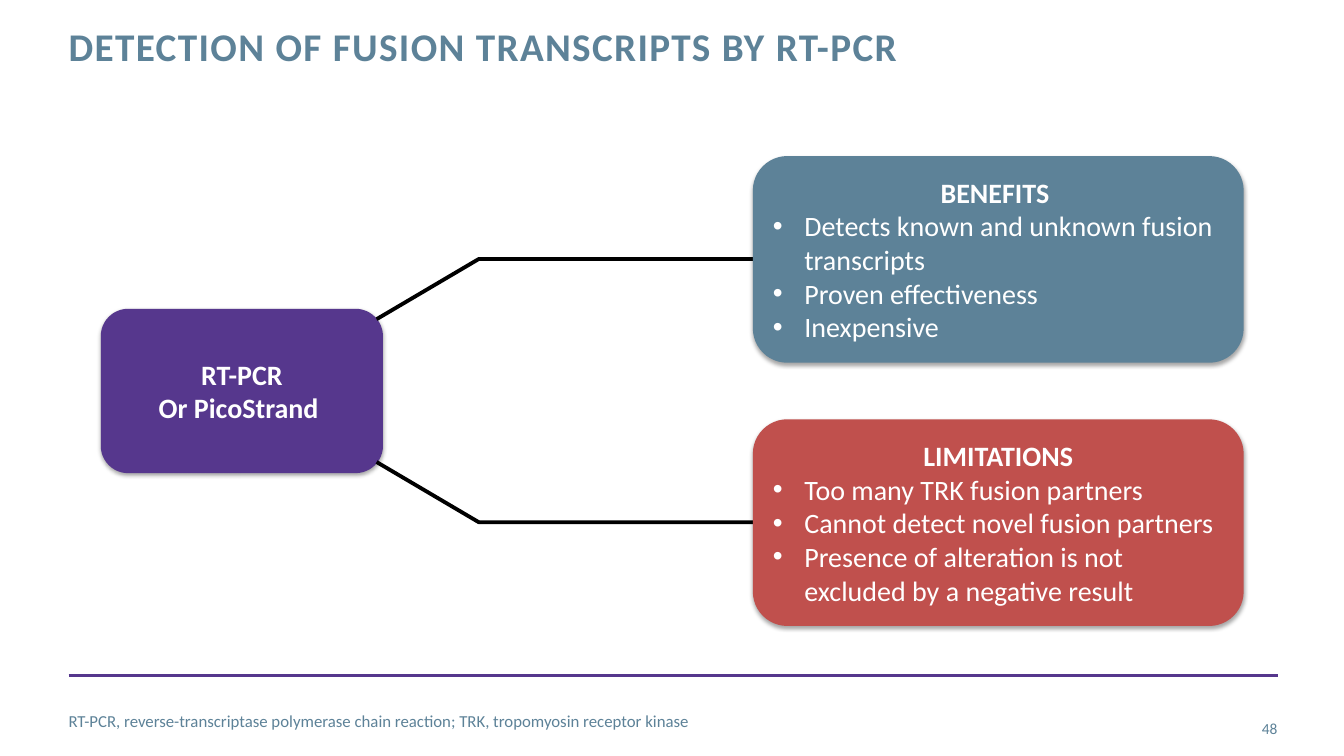
from lxml import etree
from pptx import Presentation, util as u
from pptx.dml.color import RGBColor
from pptx.enum import shapes, text
from pptx.oxml import ns

COLORS = {"steel": "5D8298", "purple": "56378D", "red": "C0504D",
          "white": "FFFFFF", "black": "000000"}
ALIGN = text.PP_ALIGN
ANCHOR = text.MSO_ANCHOR


class SlideBuilder:
    """Holds the style and current page, and adds each kind of element."""

    def __init__(self, page, font="Calibri"):
        self.page = page
        self.font = font

    def color(self, name):
        return RGBColor.from_string(COLORS[name])

    def child(self, parent, tag, **attributes):
        return etree.SubElement(parent, ns.qn(tag), attributes)

    def style(self, para, size, color, bold=False, align=ALIGN.LEFT):
        para.alignment = align
        for span in para.runs:
            span.font.name = self.font
            span.font.size = u.Pt(size)
            span.font.bold = bold
            span.font.color.rgb = self.color(color)

    def label(self, words, left, top, width, height, size, bold=False,
              align=ALIGN.LEFT, anchor=ANCHOR.MIDDLE):
        box = self.page.shapes.add_textbox(*map(u.Pt, (left, top, width, height)))
        frame = box.text_frame
        frame.word_wrap = True
        frame.vertical_anchor = anchor
        frame.margin_left = frame.margin_right = 0
        frame.margin_top = frame.margin_bottom = 0
        frame.text = words
        para = frame.paragraphs[0]
        self.style(para, size, "steel", bold, align)
        return para

    def title(self, words, *place):
        para = self.label(words, *place, size=28, bold=True, anchor=ANCHOR.TOP)
        para.line_spacing = u.Pt(30)
        para.runs[0]._r.get_or_add_rPr().set("spc", "100")

    def rule(self, left, right, y):
        line = self.page.shapes.add_connector(
            shapes.MSO_CONNECTOR.STRAIGHT, u.Pt(left), u.Pt(y), u.Pt(right), u.Pt(y))
        line.line.color.rgb = self.color("purple")
        line.line.width = u.Pt(2)
        self.child(line._element.spPr, "a:effectLst")

    def branch(self, *points):
        builder = self.page.shapes.build_freeform(*points[0], scale=u.Pt(1))
        builder.add_line_segments(points[1:], close=False)
        line = builder.convert_to_shape()
        line.shadow.inherit = False
        line.fill.background()
        line.line.color.rgb = self.color("black")
        line.line.width = u.Pt(2.75)

    def card(self, fill, headings, bullets, *place):
        box = self.page.shapes.add_shape(
            shapes.MSO_SHAPE.ROUNDED_RECTANGLE, *map(u.Pt, place))
        box.fill.solid()
        box.fill.fore_color.rgb = self.color(fill)
        box.line.fill.background()
        self.drop_shadow(box)
        frame = box.text_frame
        frame.word_wrap = True
        frame.vertical_anchor = ANCHOR.MIDDLE
        frame.text = "\n".join(headings + bullets)
        for index, para in enumerate(frame.paragraphs):
            heading = index < len(headings)
            if not heading:
                self.bullet(para)
            self.style(para, 20, "white", heading,
                       ALIGN.CENTER if heading else ALIGN.LEFT)

    def drop_shadow(self, box):
        box.shadow.inherit = False
        effects = box._element.spPr.find(ns.qn("a:effectLst"))
        shadow = self.child(effects, "a:outerShdw", blurRad=str(u.Pt(3.1)),
                            dist=str(u.Pt(1.8)), dir="5400000", rotWithShape="0")
        tint = self.child(shadow, "a:srgbClr", val=COLORS["black"])
        self.child(tint, "a:alpha", val="35000")

    def bullet(self, para):
        props = para._p.get_or_add_pPr()
        props.set("marL", str(u.Pt(22.5)))
        props.set("indent", str(u.Pt(-22.5)))
        self.child(props, "a:buFont", typeface="Arial")
        self.child(props, "a:buChar", char="•")


def main():
    deck = Presentation()
    deck.slide_width, deck.slide_height = u.Pt(960), u.Pt(540)
    slide = SlideBuilder(deck.slides.add_slide(deck.slide_layouts[6]))

    slide.rule(49, 913, 482.4)
    slide.label("48", 850.5, 506, 62, 29, size=11, align=ALIGN.RIGHT)
    slide.title("DETECTION OF FUSION TRANSCRIPTS BY RT-PCR", 49, 19.5, 688, 63)
    slide.label("RT-PCR, reverse-transcriptase polymerase chain reaction; "
                "TRK, tropomyosin receptor kinase", 49, 500.5, 801, 29, size=12)

    middle = 279.3
    slide.card("purple", ["RT-PCR", "Or PicoStrand "], [],
               72, middle - 58.7, 201.6, 117.4)
    outcomes = [
        (-1, "steel", "BENEFITS ",
         ["Detects known and unknown fusion transcripts",
          "Proven effectiveness", "Inexpensive"]),
        (1, "red", "LIMITATIONS",
         ["Too many TRK fusion partners", "Cannot detect novel fusion partners",
          "Presence of alteration is not excluded by a negative result"]),
    ]
    for side, fill, heading, bullets in outcomes:
        center = middle + side * 94
        slide.branch((543.6, center), (342, center), (268.6, middle + side * 51))
        slide.card(fill, [heading], bullets, 537.8, center - 73.8, 350.6, 147.6)

    deck.save("out.pptx")


if __name__ == "__main__":
    main()
